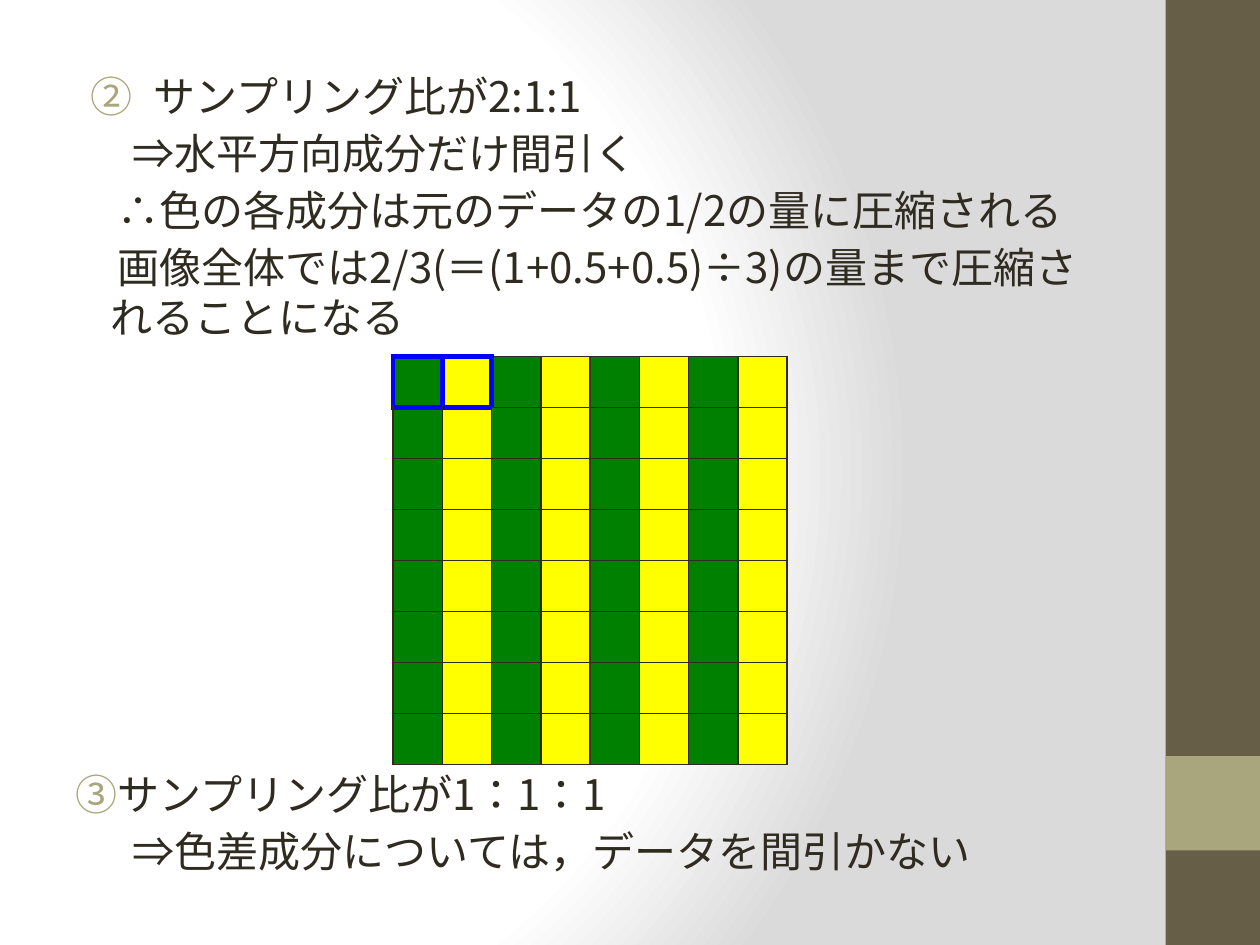
from dataclasses import dataclass

from lxml.etree import SubElement
from pptx import Presentation
from pptx.dml.color import RGBColor as RGB
from pptx.enum.lang import MSO_LANGUAGE_ID as LANG
from pptx.enum.shapes import MSO_SHAPE
from pptx.oxml import parse_xml
from pptx.oxml.ns import nsdecls, qn
from pptx.util import Inches, Pt


@dataclass(frozen=True)
class Theme:
    font: str = "Noto Sans CJK JP"
    size: int = 24
    cell_size: int = 12
    text: str = "2F2B20"
    side: str = "675E47"
    accent: str = "A9A57C"
    back: str = "FFFFFF"
    back_edge: str = "DADADA"
    kept: str = "008000"
    skipped: str = "FFFF00"
    sampled: str = "0000FF"


THEME = Theme()
GRID = 8
SAMPLED = {(0, 0), (0, 1)}
NUMBERED, ARROW, HANGING = (0.62, -0.5), (0.12, 0), (0.28, -0.28)


def set_background(s):
    stops = ((0, THEME.back), (75, THEME.back), (100, THEME.back_edge))
    gs = "".join(
        f'<a:gs pos="{pos * 1000}"><a:srgbClr val="{color}"/></a:gs>'
        for pos, color in stops
    )
    s.background.fill.solid()
    bg_pr = s.background._cSld.bg.bgPr
    bg_pr.replace(bg_pr[0], parse_xml(
        f'<a:gradFill {nsdecls("a")} rotWithShape="1"><a:gsLst>{gs}</a:gsLst>'
        '<a:path path="circle"><a:fillToRect l="20000" t="50000" '
        'r="100000" b="50000"/></a:path></a:gradFill>'
    ))


def add_band(s, top, height, color):
    sp = s.shapes.add_shape(
        MSO_SHAPE.RECTANGLE, Inches(9.25), Inches(top), Inches(0.75), Inches(height)
    )
    sp.shadow.inherit = False
    sp.fill.solid()
    sp.fill.fore_color.rgb = RGB.from_string(color)
    sp.line.fill.background()


def style_paragraph(p, indents, number):
    p.space_before = Pt(3.8)
    p.font.name = THEME.font
    p.font.size = Pt(THEME.size)
    p.font.language_id = LANG.JAPANESE
    p.font.color.rgb = RGB.from_string(THEME.text)
    pPr = p._p.get_or_add_pPr()
    margin, indent = indents
    pPr.set("marL", str(Inches(margin)))
    pPr.set("indent", str(Inches(indent)))
    defaults = pPr.find(qn("a:defRPr"))
    SubElement(defaults, qn("a:ea")).set("typeface", THEME.font)
    if number:
        for xml in (
            f'<a:buClr {nsdecls("a")}><a:srgbClr val="{THEME.accent}"/></a:buClr>',
            f'<a:buAutoNum {nsdecls("a")} type="circleNumDbPlain" startAt="{number}"/>',
        ):
            defaults.addprevious(parse_xml(xml))


def add_points(s, top, height, points):
    tf = s.shapes.add_textbox(
        Inches(0.5), Inches(top), Inches(8.33), Inches(height)
    ).text_frame
    tf.word_wrap = True
    for i, (text, indents, number) in enumerate(points):
        p = tf.add_paragraph() if i else tf.paragraphs[0]
        r = p.add_run()
        r.text = text
        r.font.language_id = LANG.JAPANESE
        style_paragraph(p, indents, number)


def set_borders(cell, row, col):
    tcPr = cell._tc.get_or_add_tcPr()
    neighbours = {
        "lnL": (row, col - 1), "lnR": (row, col + 1),
        "lnT": (row - 1, col), "lnB": (row + 1, col),
    }
    for side, neighbour in neighbours.items():
        marked = SAMPLED & {(row, col), neighbour}
        color, width = (THEME.sampled, 3) if marked else (THEME.text, 1)
        tcPr.append(parse_xml(
            f'<a:{side} {nsdecls("a")} w="{Pt(width)}"><a:solidFill>'
            f'<a:srgbClr val="{color}"/></a:solidFill></a:{side}>'
        ))


def add_pixel_grid(s):
    table = s.shapes.add_table(
        GRID, GRID, Inches(3.12), Inches(2.83), Inches(3.13), Inches(3.24)
    ).table
    table.first_row = table.horz_banding = False
    for row in range(GRID):
        for col in range(GRID):
            cell = table.cell(row, col)
            cell.margin_top = cell.margin_bottom = 0
            cell.text_frame.paragraphs[0].font.size = Pt(THEME.cell_size)
            set_borders(cell, row, col)
            cell.fill.solid()
            color = THEME.skipped if col % 2 else THEME.kept
            cell.fill.fore_color.rgb = RGB.from_string(color)


def main():
    prs = Presentation()
    prs.slide_width, prs.slide_height = Inches(10), Inches(7.5)
    s = prs.slides.add_slide(prs.slide_layouts[6])
    set_background(s)
    add_band(s, 0, 7.5, THEME.side)
    add_band(s, 6, 0.75, THEME.accent)
    add_points(s, 0.51, 2.3, [
        ("サンプリング比が2:1:1", NUMBERED, 2),
        ("　⇒水平方向成分だけ間引く", ARROW, None),
        ("　∴色の各成分は元のデータの1/2の量に圧縮される", HANGING, None),
        ("　画像全体では2/3(＝(1+0.5+0.5)÷3)の量まで圧縮されることになる", HANGING, None),
    ])
    add_points(s, 6.05, 1.26, [
        ("サンプリング比が1：1：1", HANGING, 3),
        ("　⇒色差成分については，データを間引かない", ARROW, None),
    ])
    add_pixel_grid(s)
    prs.save("out.pptx")


if __name__ == "__main__":
    main()
